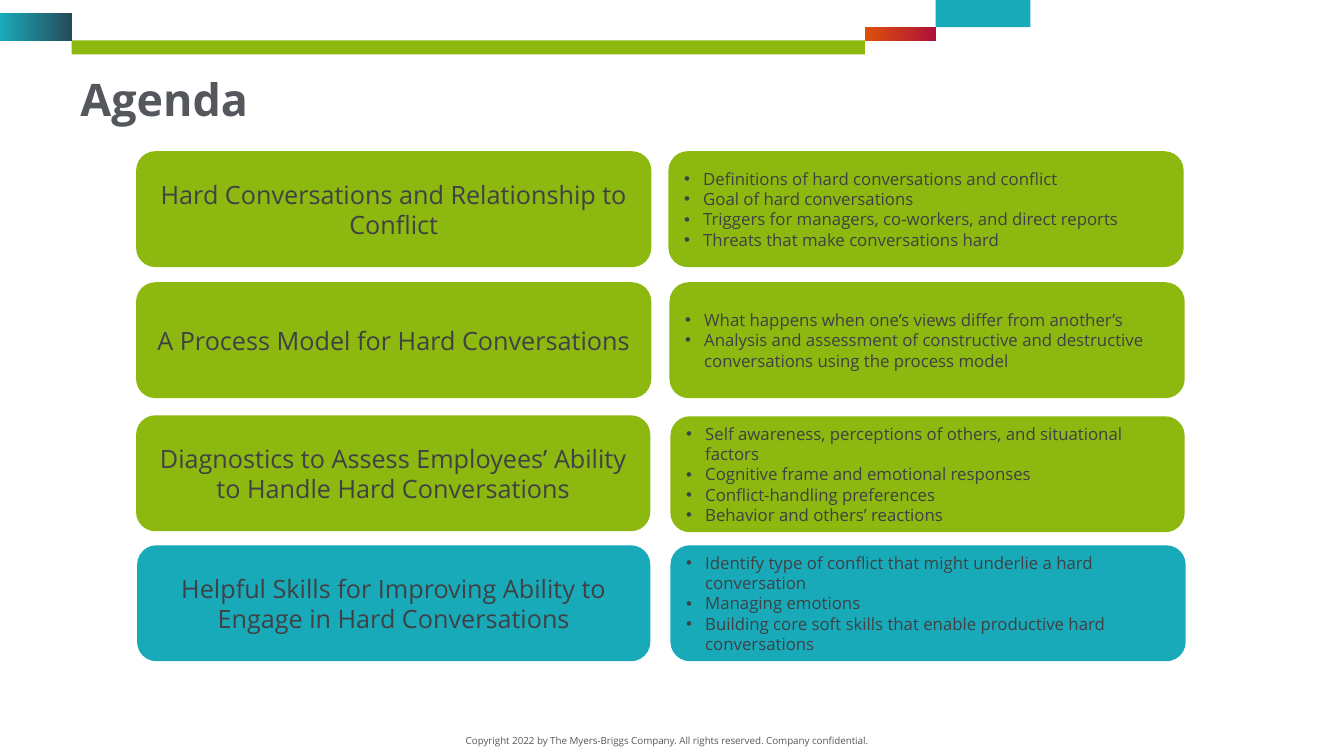
"""Build the agenda slide: four topics, each beside a card listing its points."""
from lxml import etree
from pptx import Presentation
from pptx.dml.color import RGBColor
from pptx.enum.shapes import MSO_SHAPE
from pptx.enum.text import MSO_ANCHOR, MSO_AUTO_SIZE, PP_ALIGN
from pptx.oxml.ns import qn
from pptx.util import Inches, Pt

RECTANGLE, ROUNDED = MSO_SHAPE.RECTANGLE, MSO_SHAPE.ROUNDED_RECTANGLE
LEFT, CENTER = PP_ALIGN.LEFT, PP_ALIGN.CENTER
MIDDLE, TOP = MSO_ANCHOR.MIDDLE, MSO_ANCHOR.TOP
GREEN, TEAL, GRAY, DARK = "8CB80F", "19AABA", "54575B", "3F4144"
CARD_HEIGHT = 1.15


def add_block(kind, place, colors):
    block = page.shapes.add_shape(kind, *map(Inches, place))
    block.shadow.inherit = False
    block.line.fill.background()
    if len(colors) == 1:
        block.fill.solid()
        block.fill.fore_color.rgb = RGBColor.from_string(colors[0])
    else:
        block.fill.gradient()
        block.fill.gradient_angle = 0
        for stop, color in zip(block.fill.gradient_stops, colors):
            stop.color.rgb = RGBColor.from_string(color)
    return block


def write(box, lines, size, color, align=LEFT, anchor=MIDDLE, bold=False, bullets=False):
    frame = box.text_frame
    frame.word_wrap = True
    frame.vertical_anchor = anchor
    frame.text = "\n".join(lines)
    look = {"name": "Open Sans", "size": Pt(size), "bold": bold}
    for para in frame.paragraphs:
        para.alignment = align
        if bullets:
            props = para._p.get_or_add_pPr()
            props.set("marL", str(Inches(0.19)))
            props.set("indent", str(Inches(-0.19)))
            etree.SubElement(props, qn("a:buFont")).set("typeface", "Arial")
            etree.SubElement(props, qn("a:buChar")).set("char", "•")
        for span in para.runs:
            for key, value in look.items():
                setattr(span.font, key, value)
            span.font.color.rgb = RGBColor.from_string(color)


deck = Presentation()
deck.slide_width, deck.slide_height = Inches(13.33), Inches(7.5)
page = deck.slides.add_slide(deck.slide_layouts[6])

header_bars = [
    ((0.71, 0.4, 7.87, 0.14), [GREEN]),
    ((0, 0.13, 0.71, 0.28), [TEAL, "244C5A"]),
    ((9.28, 0, 0.94, 0.27), [TEAL]),
    ((8.58, 0.27, 0.7, 0.14), ["DC500A", "AE1237"]),
]
for place, colors in header_bars:
    add_block(RECTANGLE, place, colors)

title = page.shapes.add_textbox(Inches(0.7), Inches(0.72), Inches(11.3), Inches(0.99))
write(title, ["Agenda"], 32, GRAY, anchor=TOP, bold=True)
title.text_frame.paragraphs[0].line_spacing = 0.9

footer = page.shapes.add_textbox(Inches(4.46), Inches(7.24), Inches(4.31), Inches(0.22))
write(footer, ["Copyright 2022 by The Myers-Briggs Company. All rights reserved. Company confidential."],
      7, GRAY, align=CENTER, anchor=TOP)
footer.text_frame.auto_size = MSO_AUTO_SIZE.SHAPE_TO_FIT_TEXT

agenda = [
    ((1.35, 1.5, 5.11), (6.63, 1.5, 5.11), GREEN,
     "Hard Conversations and Relationship to Conflict",
     ["Definitions of hard conversations and conflict",
      "Goal of hard conversations",
      "Triggers for managers, co-workers, and direct reports",
      "Threats that make conversations hard"]),
    ((1.35, 2.8, 5.11), (6.64, 2.8, 5.11), GREEN,
     "A Process Model for Hard Conversations",
     ["What happens when one’s views differ from another’s",
      "Analysis and assessment of constructive and destructive conversations using the process model"]),
    ((1.35, 4.12, 5.1), (6.65, 4.13, 5.1), GREEN,
     "Diagnostics to Assess Employees’ Ability to Handle Hard Conversations",
     ["Self awareness, perceptions of others, and situational factors",
      "Cognitive frame and emotional responses",
      "Conflict-handling preferences",
      "Behavior and others’ reactions"]),
    ((1.36, 5.41, 5.09), (6.65, 5.41, 5.11), TEAL,
     "Helpful Skills for Improving Ability to Engage in Hard Conversations",
     ["Identify type of conflict that might underlie a hard conversation",
      "Managing emotions",
      "Building core soft skills that enable productive hard conversations"]),
]
for topic_place, points_place, color, topic, points in agenda:
    topic_card = add_block(ROUNDED, (*topic_place, CARD_HEIGHT), [color])
    write(topic_card, [topic], 18, DARK, align=CENTER)
    points_card = add_block(ROUNDED, (*points_place, CARD_HEIGHT), [color])
    write(points_card, points, 12, DARK, bullets=True)

deck.save("out.pptx")
